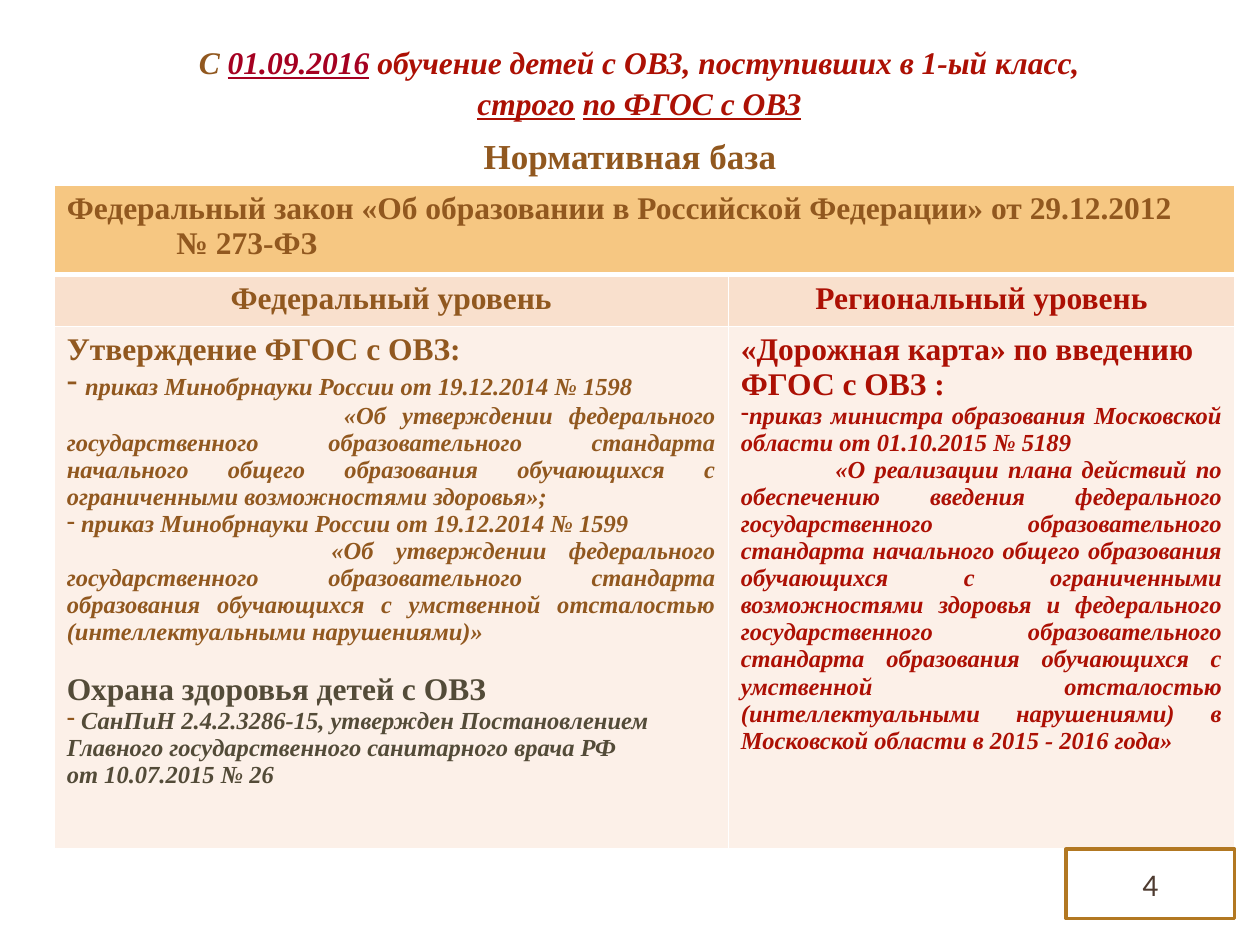
import pptx
import pptx.dml.color
import pptx.enum.shapes
import pptx.enum.text
import pptx.oxml
import pptx.oxml.ns
import pptx.util
from lxml import etree
from pptx.util import Inches

COLORS = {
    "brown": "91581F", "red": "AC1004", "crimson": "A50021", "olive": "534B38",
    "orange": "F6C782", "peach": "F9E0CD", "cream": "FCF0E8", "white": "FFFFFF",
    "frame": "B27822", "number": "4E3B30",
}
SERIF = "Times New Roman"
ALIGN = pptx.enum.text.PP_ALIGN


def color(name):
    return pptx.dml.color.RGBColor.from_string(COLORS[name])


def add_para(frame, spans, size, ink, italic=False, bold=True, font=SERIF,
             align=ALIGN.LEFT, bullet=False, indent=0, before=0):
    """Add a paragraph; each span is a text or (text, {font attribute: value})."""
    first = frame.paragraphs[0]
    para = first if not first.runs else frame.add_paragraph()
    para.alignment = align
    if bullet or indent:
        props = para._p.get_or_add_pPr()
        props.set("marL", "0")
        props.set("indent", str(Inches(indent)))
        if bullet:
            mark = etree.SubElement(props, pptx.oxml.ns.qn("a:buChar"))
            mark.set("char", "-")
    if before:
        para.space_before = pptx.util.Pt(before)
    para.font.name, para.font.size = font, pptx.util.Pt(size)
    para.font.bold, para.font.italic = bold, italic
    para.font.color.rgb = color(ink)
    for item in spans:
        text, changes = item if isinstance(item, tuple) else (item, {})
        span = para.add_run()
        span.text = text
        for key, value in changes.items():
            if key == "ink":
                span.font.color.rgb = color(value)
            else:
                setattr(span.font, key, value)


def add_textbox(page, left, top, width, height):
    box = page.shapes.add_textbox(*map(Inches, (left, top, width, height)))
    box.text_frame.word_wrap = True
    return box.text_frame


def style_cell(cell, fill, bottom=1):
    cell.fill.solid()
    cell.fill.fore_color.rgb = color(fill)
    props = cell._tc.get_or_add_tcPr()
    for place, side in enumerate(("lnL", "lnR", "lnT", "lnB")):
        width = pptx.util.Pt(bottom if side == "lnB" else 1)
        props.insert(place, pptx.oxml.parse_xml(
            f'<a:{side} {pptx.oxml.ns.nsdecls("a")} w="{width}"><a:solidFill>'
            f'<a:srgbClr val="{COLORS["white"]}"/></a:solidFill></a:{side}>'))


def add_heading(page):
    frame = add_textbox(page, 0.35, 0.29, 9.45, 0.71)
    add_para(frame, [
        ("С ", {"ink": "brown"}),
        ("01.09.2016", {"ink": "crimson", "underline": True}),
        " обучение детей с ОВЗ, поступивших в 1-ый класс,",
    ], 18, "red", italic=True, align=ALIGN.CENTER)
    add_para(frame, [("строго", {"underline": True}), " ",
                     ("по ФГОС с ОВЗ", {"underline": True})],
             18, "red", italic=True, align=ALIGN.CENTER, before=2)
    frame = add_textbox(page, 0.5, 1.02, 9, 0.45)
    add_para(frame, ["Нормативная база"], 20, "brown", align=ALIGN.CENTER)


def add_order(frame, ink, order, title, indent):
    """An order's number as a bullet, then its indented title."""
    add_para(frame, order, 14, ink, italic=True, align=ALIGN.JUSTIFY, bullet=True)
    add_para(frame, [title], 14, ink, italic=True, align=ALIGN.JUSTIFY, indent=indent)


def fill_federal(frame):
    add_para(frame, ["Утверждение ФГОС с ОВЗ:"], 18, "brown")
    add_order(frame, "brown",
              [(" ", {"size": pptx.util.Pt(18)}),
               "приказ Минобрнауки России от 19.12.2014 № 1598"],
              "«Об утверждении федерального государственного образовательного "
              "стандарта начального общего образования обучающихся с "
              "ограниченными возможностями здоровья»;", 2.2)
    add_order(frame, "brown", [" приказ Минобрнауки России от 19.12.2014 № 1599"],
              "«Об утверждении федерального государственного образовательного "
              "стандарта образования обучающихся с умственной отсталостью "
              "(интеллектуальными нарушениями)»", 2.1)
    add_para(frame, ["Охрана здоровья детей с ОВЗ"], 18, "olive",
             align=ALIGN.JUSTIFY, before=15)
    add_para(frame, [(" ", {"ink": "brown"}),
                     "СанПиН 2.4.2.3286-15, утвержден Постановлением "
                     "Главного государственного санитарного врача РФ"],
             14, "olive", italic=True, bullet=True)
    add_para(frame, ["от 10.07.2015 № 26"], 14, "olive", italic=True)


def fill_regional(frame):
    add_para(frame, ["«Дорожная карта» по введению ФГОС с ОВЗ :"], 18, "red")
    add_order(frame, "red",
              ["приказ министра образования Московской области от 01.10.2015 № 5189"],
              "«О реализации плана действий по обеспечению введения федерального "
              "государственного образовательного стандарта начального общего "
              "образования обучающихся с ограниченными возможностями здоровья и "
              "федерального государственного образовательного стандарта "
              "образования обучающихся с умственной отсталостью "
              "(интеллектуальными нарушениями) в Московской области "
              "в 2015 - 2016 года»", 0.75)


def add_law_table(page):
    table = page.shapes.add_table(
        3, 2, *map(Inches, (0.43, 1.47, 9.37, 5.27))).table
    for column, width in zip(table.columns, (5.35, 4.02)):
        column.width = Inches(width)
    rows = ((0.71, "orange", 3), (0.41, "peach", 1), (4.15, "cream", 1))
    for row, (height, fill, bottom) in zip(table.rows, rows):
        row.height = Inches(height)
        for cell in row.cells:
            style_cell(cell, fill, bottom)

    # Law across both columns
    table.cell(0, 0).merge(table.cell(0, 1))
    law = table.cell(0, 0).text_frame
    add_para(law, ["Федеральный закон «Об образовании в Российской Федерации» "
                   "от 29.12.2012"], 18, "brown")
    add_para(law, ["№ 273-ФЗ"], 18, "brown", indent=0.87)

    # Levels and their documents
    levels = (("Федеральный уровень", "brown", fill_federal),
              ("Региональный уровень", "red", fill_regional))
    for column, (title, ink, fill_body) in enumerate(levels):
        add_para(table.cell(1, column).text_frame, [title], 18, ink,
                 align=ALIGN.CENTER)
        fill_body(table.cell(2, column).text_frame)


def add_page_number(page):
    box = page.shapes.add_shape(pptx.enum.shapes.MSO_SHAPE.RECTANGLE,
                                *map(Inches, (8.46, 6.74, 1.34, 0.55)))
    box.shadow.inherit = False
    box.fill.solid()
    box.fill.fore_color.rgb = color("white")
    box.line.color.rgb = color("frame")
    box.line.width = pptx.util.Pt(2)
    box.text_frame.vertical_anchor = pptx.enum.text.MSO_ANCHOR.MIDDLE
    add_para(box.text_frame, ["4"], 18, "number", bold=False, font="Calibri",
             align=ALIGN.CENTER)


def main():
    deck = pptx.Presentation()
    deck.slide_width, deck.slide_height = Inches(10), Inches(7.5)
    page = deck.slides.add_slide(deck.slide_layouts[6])
    add_heading(page)
    add_law_table(page)
    add_page_number(page)
    deck.save("out.pptx")


if __name__ == "__main__":
    main()
